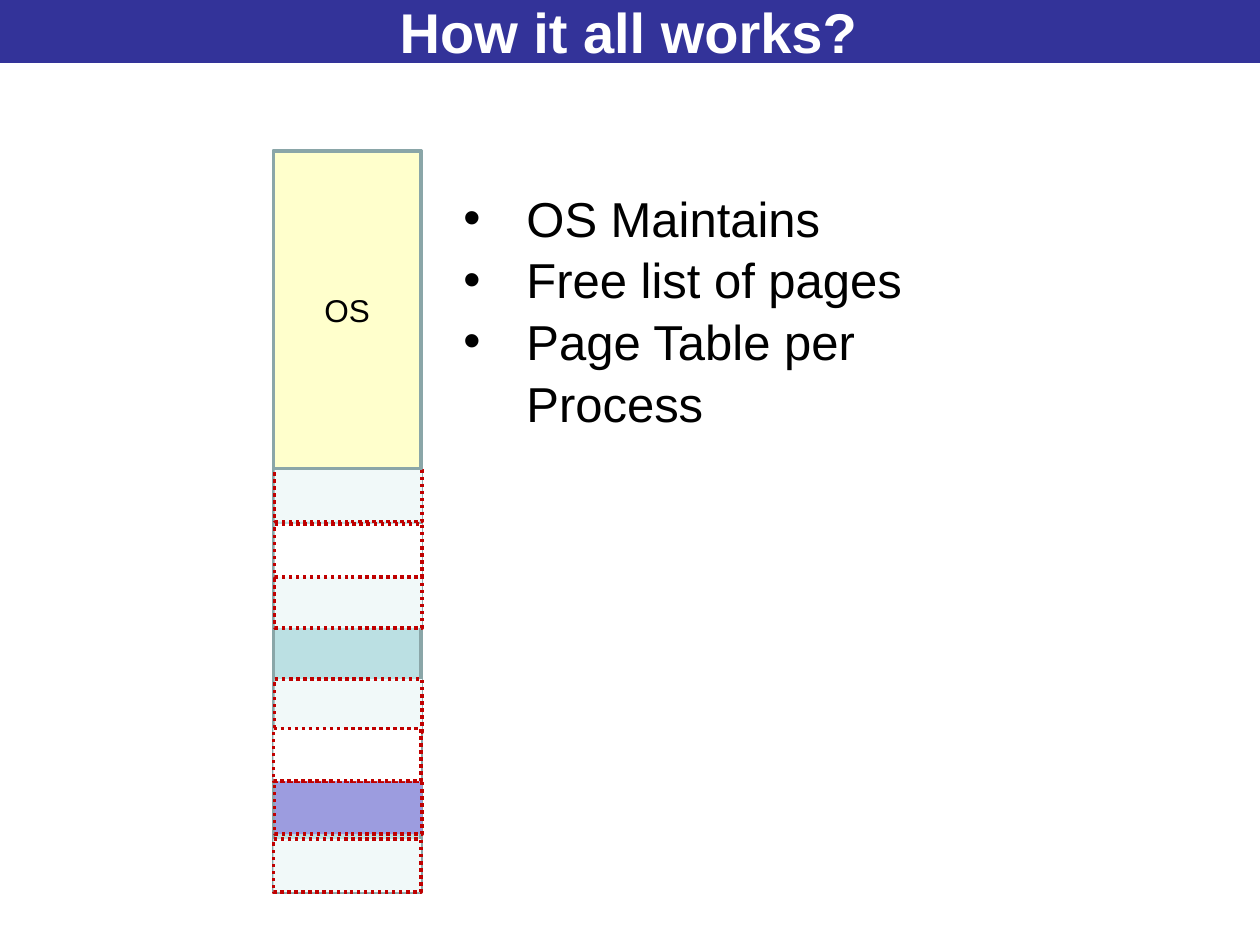
from pptx import Presentation
from pptx.dml.color import RGBColor
from pptx.enum.dml import MSO_LINE
from pptx.enum.shapes import MSO_SHAPE
from pptx.enum.text import MSO_ANCHOR, PP_ALIGN
from pptx.oxml.ns import qn
from pptx.util import Pt
from lxml import etree

RECTANGLE = MSO_SHAPE.RECTANGLE
DOTTED = MSO_LINE.ROUND_DOT
MIDDLE = MSO_ANCHOR.MIDDLE
TOP = MSO_ANCHOR.TOP
CENTER = PP_ALIGN.CENTER
LEFT = PP_ALIGN.LEFT

MEMORY_LEFT, MEMORY_TOP = 156.25, 86.4
MEMORY_WIDTH, MEMORY_HEIGHT = 84.25, 423.4
OS_HEIGHT = 181.4
PAGE_HEIGHT = 30.24
PAGE_SHIFT = 0.75
MEMORY_EDGE, PAGE_EDGE = "8AA6A8", "C00000"
FREE, WHITE, USED = "F1F9F9", "FFFFFF", "9C9CDF"

# Back to front: top, fill, offset from the memory column
PAGES = [
    (267.85, FREE, PAGE_SHIFT),
    (479.5, FREE, 0),
    (388.1, FREE, PAGE_SHIFT),
    (328.5, FREE, PAGE_SHIFT),
    (446.4, USED, PAGE_SHIFT),
    (299.5, WHITE, PAGE_SHIFT),
    (416.2, WHITE, 0),
]
OS_TASKS = ["OS Maintains", "Free list of pages", "Page Table per Process"]


def color(hex_string):
    return RGBColor.from_string(hex_string)


def add_box(slide, left, top, width, height, fill, edge=None, dash=None):
    shape = slide.shapes.add_shape(
        RECTANGLE, Pt(left), Pt(top), Pt(width), Pt(height))
    shape.shadow.inherit = False
    shape.fill.solid()
    shape.fill.fore_color.rgb = color(fill)
    if edge:
        shape.line.color.rgb = color(edge)
        shape.line.width = Pt(2)
        if dash:
            shape.line.dash_style = dash
    else:
        shape.line.fill.background()
    return shape


def write_text(shape, lines, size, font_color="000000", bold=False,
               align=CENTER, anchor=MIDDLE, bullet_indent=0, line_spacing=None):
    frame = shape.text_frame
    frame.word_wrap = True
    frame.vertical_anchor = anchor
    for index, line in enumerate(lines):
        paragraph = frame.paragraphs[0] if index == 0 else frame.add_paragraph()
        paragraph.alignment = align
        if line_spacing:
            paragraph.line_spacing = line_spacing
        run = paragraph.add_run()
        run.text = line
        run.font.name = "Arial"
        run.font.size = Pt(size)
        run.font.bold = bold
        run.font.color.rgb = color(font_color)
        if bullet_indent:
            add_bullet(paragraph, bullet_indent)


def add_bullet(paragraph, indent):
    properties = paragraph._p.get_or_add_pPr()
    properties.set("marL", str(Pt(indent)))
    properties.set("indent", str(Pt(-indent)))
    etree.SubElement(properties, qn("a:buFont")).set("typeface", "Arial")
    etree.SubElement(properties, qn("a:buChar")).set("char", "•")


def add_memory(slide):
    add_box(slide, MEMORY_LEFT, MEMORY_TOP, MEMORY_WIDTH, MEMORY_HEIGHT,
            "BBE0E3", MEMORY_EDGE)
    for top, fill, shift in PAGES:
        add_box(slide, MEMORY_LEFT + shift, top, MEMORY_WIDTH, PAGE_HEIGHT,
                fill, PAGE_EDGE, DOTTED)
    system = add_box(slide, MEMORY_LEFT, MEMORY_TOP, MEMORY_WIDTH, OS_HEIGHT,
                     "FFFFCC", MEMORY_EDGE)
    write_text(system, ["OS"], 18)


def main():
    presentation = Presentation()
    presentation.slide_width, presentation.slide_height = Pt(720), Pt(540)
    slide = presentation.slides.add_slide(presentation.slide_layouts[6])

    title = add_box(slide, -1.5, 0, 721.5, 36, "333399")
    write_text(title, ["How it all works?"], 32, font_color=WHITE, bold=True)

    add_memory(slide)

    tasks = slide.shapes.add_textbox(Pt(257.75), Pt(102.25), Pt(311), Pt(108.75))
    write_text(tasks, OS_TASKS, 28, align=LEFT, anchor=TOP,
               bullet_indent=36, line_spacing=1.05)

    presentation.save("out.pptx")


if __name__ == "__main__":
    main()
